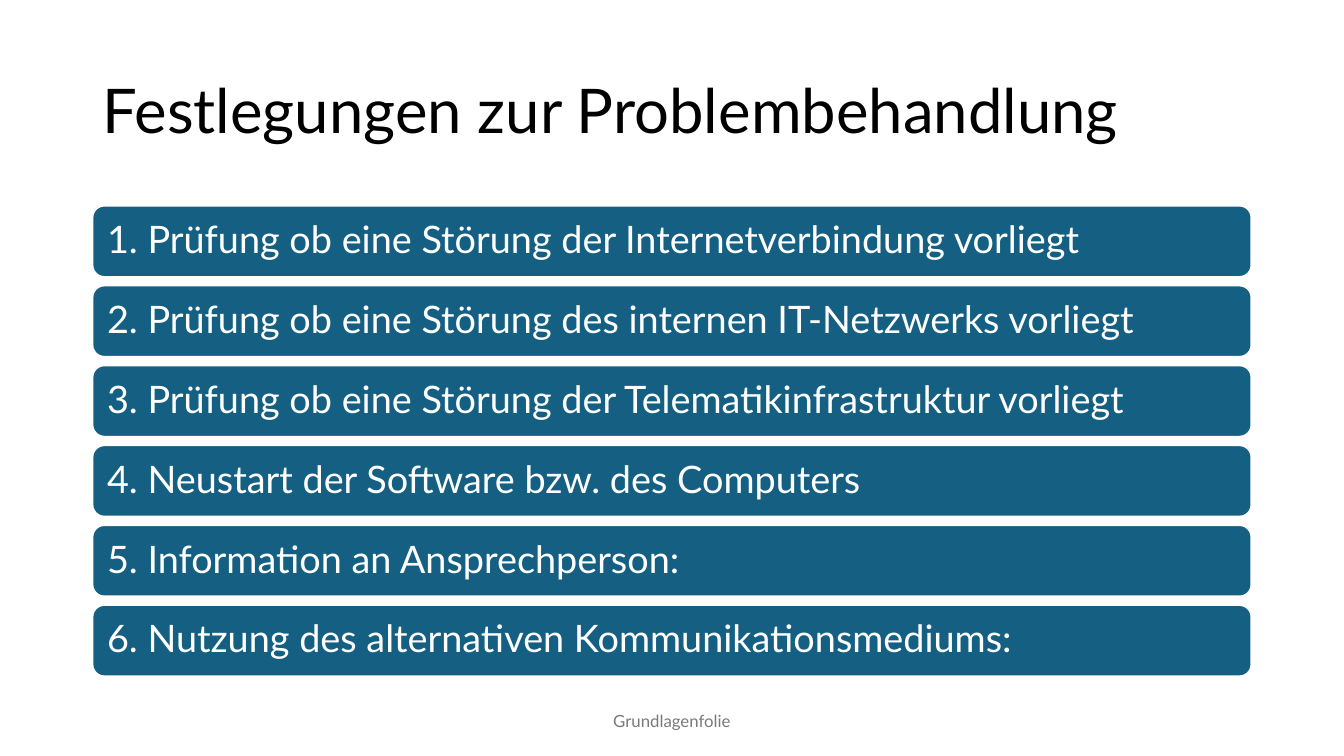
"""Build a slide listing the agreed steps for handling IT problems."""
from pptx import Presentation
from pptx.dml.color import RGBColor
from pptx.enum.shapes import MSO_SHAPE
from pptx.enum.text import MSO_ANCHOR, MSO_AUTO_SIZE, PP_ALIGN
from pptx.util import Pt

ROUNDED = MSO_SHAPE.ROUNDED_RECTANGLE
MIDDLE = MSO_ANCHOR.MIDDLE
NO_AUTOFIT = MSO_AUTO_SIZE.NONE
LEFT, CENTER = PP_ALIGN.LEFT, PP_ALIGN.CENTER

TITLE = "Festlegungen zur Problembehandlung"
STEPS = [
    "Prüfung ob eine Störung der Internetverbindung vorliegt",
    "Prüfung ob eine Störung des internen IT-Netzwerks vorliegt",
    "Prüfung ob eine Störung der Telematikinfrastruktur vorliegt",
    "Neustart der Software bzw. des Computers",
    "Information an Ansprechperson:",
    "Nutzung des alternativen Kommunikationsmediums:",
]
FOOTER = "Grundlagenfolie"

FONT = "Lato"
BLACK, WHITE, BLUE, GRAY = "000000", "FFFFFF", "156082", "797979"
MARGIN, CONTENT_WIDTH = 66, 828
FIRST_TOP, STEP_HEIGHT, STEP_PITCH = 146.8, 51.1, 57.05
STEP_INSET = 8


def color(hex_code):
    return RGBColor.from_string(hex_code)


def place(box, left, top, width, height):
    box.left, box.top = Pt(left), Pt(top)
    box.width, box.height = Pt(width), Pt(height)


def write(box, text, size, hex_code, align=LEFT, spacing=1.0):
    frame = box.text_frame
    frame.text = text
    frame.word_wrap = True
    frame.auto_size = NO_AUTOFIT
    frame.vertical_anchor = MIDDLE
    para = frame.paragraphs[0]
    para.alignment = align
    para.line_spacing = spacing
    font = para.runs[0].font
    font.name, font.size = FONT, Pt(size)
    font.color.rgb = color(hex_code)


def add_step(page, index, text):
    top = FIRST_TOP + index * STEP_PITCH
    bar = page.shapes.add_shape(
        ROUNDED, Pt(MARGIN), Pt(top), Pt(CONTENT_WIDTH), Pt(STEP_HEIGHT))
    bar.shadow.inherit = False
    bar.fill.solid()
    bar.fill.fore_color.rgb = color(BLUE)
    bar.line.color.rgb = color(WHITE)
    bar.line.width = Pt(1.5)
    frame = bar.text_frame
    frame.margin_left = frame.margin_right = Pt(STEP_INSET)
    frame.margin_top = frame.margin_bottom = Pt(STEP_INSET)
    write(bar, f"{index + 1}. {text}", 27, WHITE, spacing=0.9)


def main():
    deck = Presentation()
    deck.slide_width, deck.slide_height = Pt(960), Pt(540)
    page = deck.slides.add_slide(deck.slide_layouts.get_by_name("Title Only"))

    title = page.shapes.title
    place(title, MARGIN, 28.75, CONTENT_WIDTH, 104.4)
    write(title, TITLE, 44, BLACK, spacing=0.9)

    for index, text in enumerate(STEPS):
        add_step(page, index, text)

    footer = page.shapes.add_textbox(Pt(318), Pt(500.5), Pt(324), Pt(28.75))
    write(footer, FOOTER, 12, GRAY, CENTER)

    deck.save("out.pptx")


if __name__ == "__main__":
    main()
